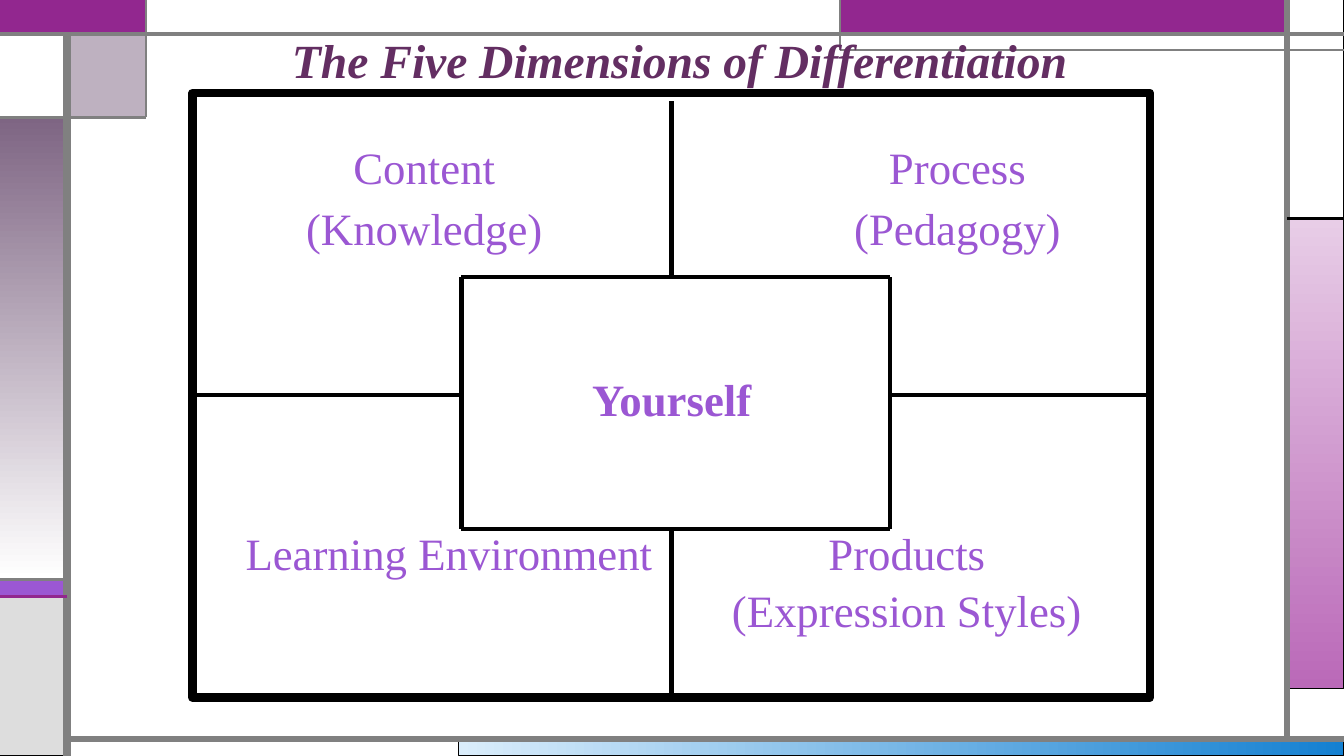
from lxml import etree
from pptx import Presentation
from pptx.dml.color import RGBColor
from pptx.enum import shapes, text
from pptx.oxml import ns
from pptx.util import Cm, Pt

rgb = RGBColor.from_string
W, H = 33.87, 19.05
GREY, BLACK, PLUM, VIOLET = "808080", "000000", "92278F", "9B57D3"


def write(tf, words, size=32, color=VIOLET, bold=False, italic=False,
          spacing=1.0, gap=0, anchor=text.MSO_ANCHOR.TOP):
    tf.word_wrap = True
    tf.auto_size = text.MSO_AUTO_SIZE.NONE
    tf.vertical_anchor = anchor
    tf.margin_left = tf.margin_right = Cm(0.1)
    tf.margin_top = tf.margin_bottom = Cm(0.13)
    for i, line in enumerate(words.split("\n")):
        p = tf.paragraphs[0] if i == 0 else tf.add_paragraph()
        p.alignment = text.PP_ALIGN.CENTER
        p.line_spacing = spacing
        p.space_before = Pt(gap if i else 0)
        r = p.add_run()
        r.text = line
        r.font.name, r.font.size = "Times New Roman", Pt(size)
        r.font.bold, r.font.italic = bold, italic
        r.font.color.rgb = rgb(color)


def add_lines(lines):
    for x1, y1, x2, y2, color, width in lines:
        c = s.shapes.add_connector(shapes.MSO_CONNECTOR.STRAIGHT,
                                   Cm(x1), Cm(y1), Cm(x2), Cm(y2))
        c.line.color.rgb = rgb(color)
        c.line.width = Pt(width)
        etree.SubElement(c._element.spPr, ns.qn("a:effectLst"))


prs = Presentation()
prs.slide_width, prs.slide_height = Cm(W), Cm(H)
s = prs.slides.add_slide(prs.slide_layouts[5])

# Border grid
left, right, top, bottom = 1.69, 32.44, 0.85, 18.63
tab, mid = 3.67, 21.17          # top strip divisions
step, low, base = 2.96, 14.6, 15.03   # left strip divisions
notch, panel = 1.27, 5.5        # right side divisions

# Border blocks: x1, y1, x2, y2, fill (colour or gradient), line, width
for x1, y1, x2, y2, fill, color, width in [
    (11.56, bottom, W, H, ("DAEDFB", "1480D1", 0), BLACK, 0.75),
    (right, panel, W, 17.36, ("E8CDE7", "BA69B8", 270), BLACK, 0.75),
    (0, low, left, base, VIOLET, BLACK, 0.75),
    (0, base, left, H, "DDDDDD", BLACK, 0.75),
    (right, 0, W, panel, "FFFFFF", BLACK, 0.75),
    (mid, 0, right, top, PLUM, "755DD9", 0.75),
    (left, top, tab, step, "7E6583", BLACK, 0.75),
    (0, step, left, low, ("7E6583", "FFFFFF", 270), BLACK, 0.75),
    (0, top, left, step, "FFFFFF", BLACK, 0.75),
    (0, 0, tab, top, PLUM, PLUM, 1.5),
    (tab, 0, mid, top, "FFFFFF", GREY, 0.75),
]:
    sp = s.shapes.add_shape(shapes.MSO_SHAPE.RECTANGLE,
                            Cm(x1), Cm(y1), Cm(x2 - x1), Cm(y2 - y1))
    sp.shadow.inherit = False
    sp.line.color.rgb, sp.line.width = rgb(color), Pt(width)
    if isinstance(fill, tuple):
        sp.fill.gradient()
        sp.fill.gradient_angle = fill[2]
        for stop, shade in zip(sp.fill.gradient_stops, fill):
            stop.color.rgb = rgb(shade)
    else:
        sp.fill.solid()
        sp.fill.fore_color.rgb = rgb(fill)
    if (x1, y1) == (left, top):   # half-transparent corner
        clr = sp._element.spPr.find(ns.qn("a:solidFill"))[0]
        etree.SubElement(clr, ns.qn("a:alpha"), val="50000")

# Border lines
add_lines([
    (left, H, left, top, GREY, 6),
    (left, bottom, W, bottom, GREY, 4.5),
    (right, bottom, right, 0, GREY, 4.5),
    (0, top, W, top, GREY, 3),
    (W, notch, mid, notch, GREY, 1.5),
    (mid, notch, mid, 0, GREY, 1.5),
    (right, panel, W, panel, BLACK, 2.25),
    (tab, 0, tab, step, GREY, 1.5),
    (tab, step, 0, step, GREY, 2.25),
    (left, low, 0, low, GREY, 2.25),
    (left, base, 0, base, PLUM, 2.25),
])

# Title, brought in front of the border
t = s.shapes.title
t.left, t.top, t.width, t.height = Cm(5.28), Cm(0.64), Cm(23.7), Cm(1.7)
write(t.text_frame, "The Five Dimensions of Differentiation",
      size=34, color="632E62", bold=True, italic=True)
s.shapes._spTree.append(t._element)

# Outer frame
fx1, fy1, fx2, fy2 = 4.85, 2.34, 28.98, 17.58
sp = s.shapes.add_shape(shapes.MSO_SHAPE.RECTANGLE,
                        Cm(fx1), Cm(fy1), Cm(fx2 - fx1), Cm(fy2 - fy1))
sp.shadow.inherit = False
sp.fill.background()
sp.line.color.rgb, sp.line.width = rgb(BLACK), Pt(6)

# Centre box and the dividers around it
bx1, by1, bx2, by2 = 11.63, 6.98, 22.43, 13.33
cx, cy = 16.92, 9.95
add_lines([edge + (BLACK, 3) for edge in [
    (cx, by1, cx, 2.54), (cx, by2, cx, fy2),
    (bx1, cy, fx1, cy), (bx2, cy, fx2, cy),
    (bx1, by1, bx2, by1), (bx1, by2, bx2, by2),
    (bx1, by1, bx1, by2), (bx2, by1, bx2, by2),
]])

# Labels
quarter = dict(spacing=0.85)
for x, y, w, h, words, fmt in [
    (bx1, by1, 10.6, 6.15, "Yourself",
     dict(bold=True, anchor=text.MSO_ANCHOR.MIDDLE)),
    (6.35, 3.6, 8.69, 2.97, "Content\n(Knowledge)", dict(quarter, gap=11)),
    (20.53, 3.6, 7.2, 2.97, "Process\n(Pedagogy)", dict(quarter, gap=11)),
    (5.92, by2, 10.8, 1.42, "Learning Environment", quarter),
    (17.14, by2, 11.43, 2.84, "Products\n(Expression Styles)",
     dict(quarter, gap=8)),
]:
    tb = s.shapes.add_textbox(Cm(x), Cm(y), Cm(w), Cm(h))
    write(tb.text_frame, words, **fmt)

prs.save("out.pptx")
